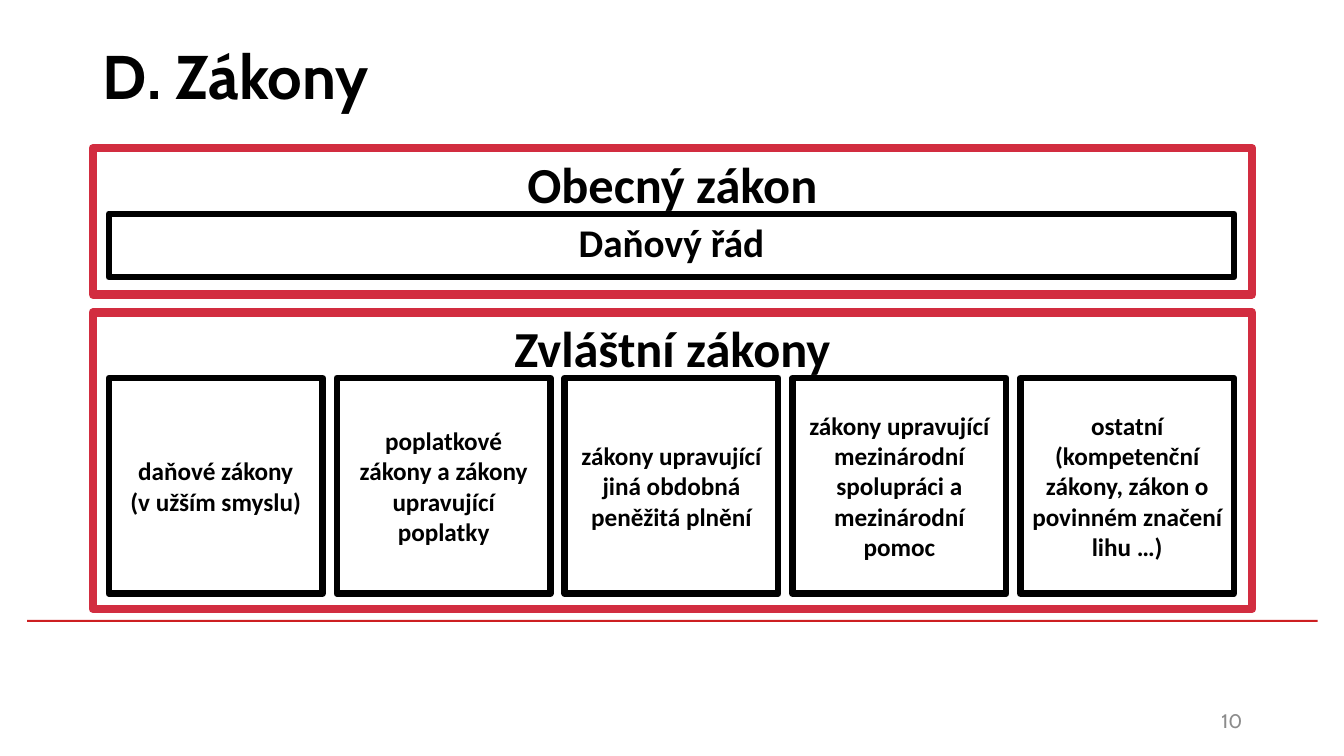
from pptx import Presentation
from pptx.dml.color import RGBColor
from pptx.enum.shapes import MSO_SHAPE
from pptx.enum.text import MSO_ANCHOR, PP_ALIGN
from pptx.util import Pt

PX = 9144
COLORS = {
    "white": "FFFFFF",
    "black": "000000",
    "frame": "D22D40",
    "rule": "CD1F21",
    "number": "8C8C8C",
}
SPECIAL_LAWS = [
    "daňové zákony\v(v užším smyslu)",
    "poplatkové zákony a zákony upravující poplatky",
    "zákony upravující jiná obdobná peněžitá plnění",
    "zákony upravující mezinárodní spolupráci a mezinárodní pomoc",
    "ostatní (kompetenční zákony, zákon o povinném značení lihu …)",
]


def color(name):
    return RGBColor.from_string(COLORS[name])


def emu(box):
    return [length * PX for length in box]


def write_text(shape, text, size, font, ink, bold, align, anchor):
    frame = shape.text_frame
    frame.word_wrap = True
    frame.vertical_anchor = anchor
    frame.margin_left = frame.margin_right = 10 * PX
    frame.margin_top = frame.margin_bottom = 5 * PX
    frame.text = text
    paragraph = frame.paragraphs[0]
    paragraph.alignment = align
    paragraph.font.size = Pt(size)
    paragraph.font.name = font
    paragraph.font.bold = bold
    paragraph.font.color.rgb = color(ink)


def add_rectangle(slide, box, fill):
    shape = slide.shapes.add_shape(MSO_SHAPE.RECTANGLE, *emu(box))
    shape.shadow.inherit = False
    shape.fill.solid()
    shape.fill.fore_color.rgb = color(fill)
    shape.line.fill.background()
    return shape


def add_panel(slide, box, text, size, border, border_width, anchor):
    shape = add_rectangle(slide, box, "white")
    shape.line.color.rgb = color(border)
    shape.line.width = Pt(border_width)
    write_text(shape, text, size, "Calibri", "black", True, PP_ALIGN.CENTER, anchor)


def add_label(slide, box, text, size, ink, bold, align):
    label = slide.shapes.add_textbox(*emu(box))
    write_text(label, text, size, "Cabin", ink, bold, align, MSO_ANCHOR.MIDDLE)


def add_law_group(slide, box, heading, laws, law_height, size, anchor):
    left, top, width, height = box
    add_panel(slide, box, heading, 36, "frame", 6, MSO_ANCHOR.TOP)
    gap = 13
    inner_left, inner_width = left + 16, width - 34
    law_width = (inner_width - gap * (len(laws) - 1)) // len(laws)
    for index, law in enumerate(laws):
        law_left = inner_left + round(index * (inner_width - law_width) / max(len(laws) - 1, 1))
        law_box = (law_left, top + 65, law_width, law_height)
        add_panel(slide, law_box, law, size, "black", 4.5, anchor)


def build_laws_slide(slide):
    add_rectangle(slide, (27, 615, 1280, 2), "rule")
    add_label(slide, (92, 2, 1150, 145), "D. Zákony", 44, "black", True, PP_ALIGN.LEFT)
    add_law_group(slide, (92, 147, 1150, 145), "Obecný zákon",
                  ["Daňový řád"], 63, 28, MSO_ANCHOR.TOP)
    add_law_group(slide, (92, 310, 1150, 294), "Zvláštní zákony",
                  SPECIAL_LAWS, 214, 18, MSO_ANCHOR.MIDDLE)
    add_label(slide, (942, 695, 300, 40), "10", 14, "number", False, PP_ALIGN.RIGHT)


def main():
    presentation = Presentation()
    presentation.slide_width = 1333 * PX
    presentation.slide_height = 750 * PX
    slide = presentation.slides.add_slide(presentation.slide_layouts[6])
    build_laws_slide(slide)
    presentation.save("out.pptx")


if __name__ == "__main__":
    main()
